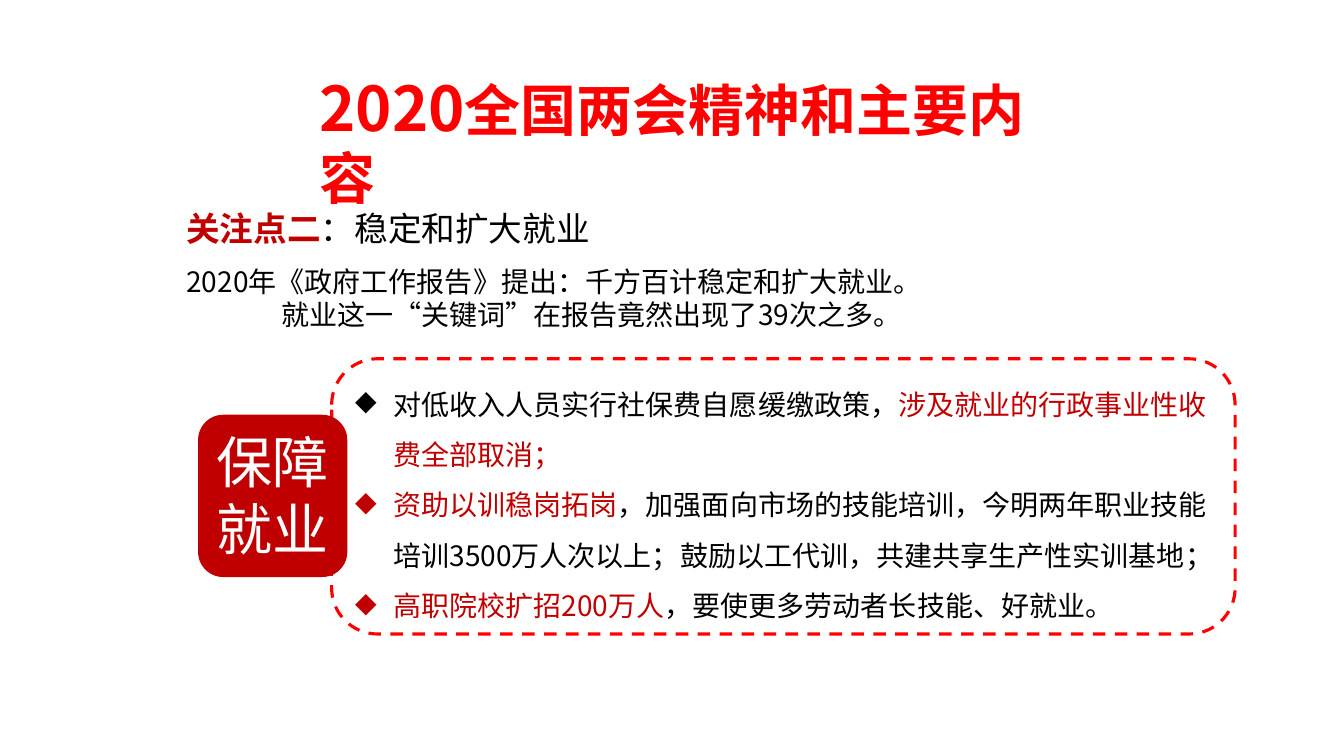
from lxml.etree import SubElement
from pptx import Presentation
from pptx.dml.color import RGBColor
from pptx.enum.dml import MSO_LINE
from pptx.enum.shapes import MSO_SHAPE
from pptx.enum.text import MSO_ANCHOR, PP_ALIGN
from pptx.oxml.ns import qn
from pptx.util import Inches, Pt

COLORS = {"bright": "FF0000", "deep": "C00000", "ink": "000000", "paper": "FFFFFF"}
FONT = "Noto Sans CJK SC"
BADGE_FONT = "Noto Sans CJK JP"

TITLE = [[("2020", 44, "bright", True), ("全国两会精神和主要内容", 40, "bright", True)]]
FOCUS = [[("关注点二", 24, "deep", True), ("：稳定和扩大就业", 24, "ink", False)]]
REPORT = [
    [("2020年《政府工作报告》提出：千方百计稳定和扩大就业。", 20, "ink", False)],
    [("就业这一“关键词”在报告竟然出现了39次之多。", 20, "ink", False)],
]
POLICIES = [
    [("对低收入人员实行社保费自愿缓缴政策，", 20, "ink", False),
     ("涉及就业的行政事业性收费全部取消；", 20, "deep", False)],
    [("资助以训稳岗拓岗", 20, "deep", False),
     ("，加强面向市场的技能培训，今明两年职业技能培训3500万人次以上；"
      "鼓励以工代训，共建共享生产性实训基地；", 20, "ink", False)],
    [("高职院校扩招200万人", 20, "deep", False),
     ("，要使更多劳动者长技能、好就业。", 20, "ink", False)],
]
BADGE = [[("保障就业", 40, "paper", False)]]

TEXT_BOXES = [
    (TITLE, (3.07, 0.64, 7.6, 0.84)),
    (FOCUS, (1.75, 2.01, 5.81, 0.5)),
    (REPORT, (1.75, 2.57, 10.33, 0.77)),
]
PANEL_PLACE = (3.29, 3.56, 8.96, 2.73)
BADGE_PLACE = (1.97, 4.12, 1.47, 1.6)
REPORT_INDENT = 0.94
BULLET_INDENT = 0.38


def color(name):
    return RGBColor.from_string(COLORS[name])


def write(shape, paragraphs, align=PP_ALIGN.LEFT, font=FONT):
    frame = shape.text_frame
    frame.word_wrap = True
    for index, spans in enumerate(paragraphs):
        para = frame.paragraphs[0] if index == 0 else frame.add_paragraph()
        para.alignment = align
        for words, size, tint, bold in spans:
            span = para.add_run()
            span.text = words
            span.font.size = Pt(size)
            span.font.bold = bold
            span.font.color.rgb = color(tint)
            span.font.name = font
            SubElement(span.font._element, qn("a:ea"), typeface=font)
    return frame


def indent(para, left, first=0):
    properties = para._p.get_or_add_pPr()
    properties.set("marL", str(Inches(left)))
    properties.set("indent", str(Inches(first)))
    return properties


def add_round_box(page, place, line_color, line_width):
    box = page.shapes.add_shape(MSO_SHAPE.ROUNDED_RECTANGLE, *map(Inches, place))
    box.shadow.inherit = False
    box.line.color.rgb = color(line_color)
    box.line.width = Pt(line_width)
    return box


def main():
    """Build the slide on employment policy."""
    deck = Presentation()
    deck.slide_width, deck.slide_height = Inches(13.33), Inches(7.5)
    page = deck.slides.add_slide(deck.slide_layouts[6])

    for paragraphs, place in TEXT_BOXES:
        frame = write(page.shapes.add_textbox(*map(Inches, place)), paragraphs)
    indent(frame.paragraphs[1], REPORT_INDENT)

    panel = add_round_box(page, PANEL_PLACE, "bright", 2.25)
    panel.fill.background()
    panel.line.dash_style = MSO_LINE.DASH
    frame = write(panel, POLICIES)
    frame.vertical_anchor = MSO_ANCHOR.MIDDLE
    for para in frame.paragraphs:
        para.line_spacing = 1.5
        properties = indent(para, BULLET_INDENT, -BULLET_INDENT)
        SubElement(properties, qn("a:buChar"), char="◆")

    badge = add_round_box(page, BADGE_PLACE, "deep", 0.75)
    badge.fill.solid()
    badge.fill.fore_color.rgb = color("deep")
    frame = write(badge, BADGE, PP_ALIGN.CENTER, BADGE_FONT)
    frame.vertical_anchor = MSO_ANCHOR.TOP

    deck.save("out.pptx")


if __name__ == "__main__":
    main()
